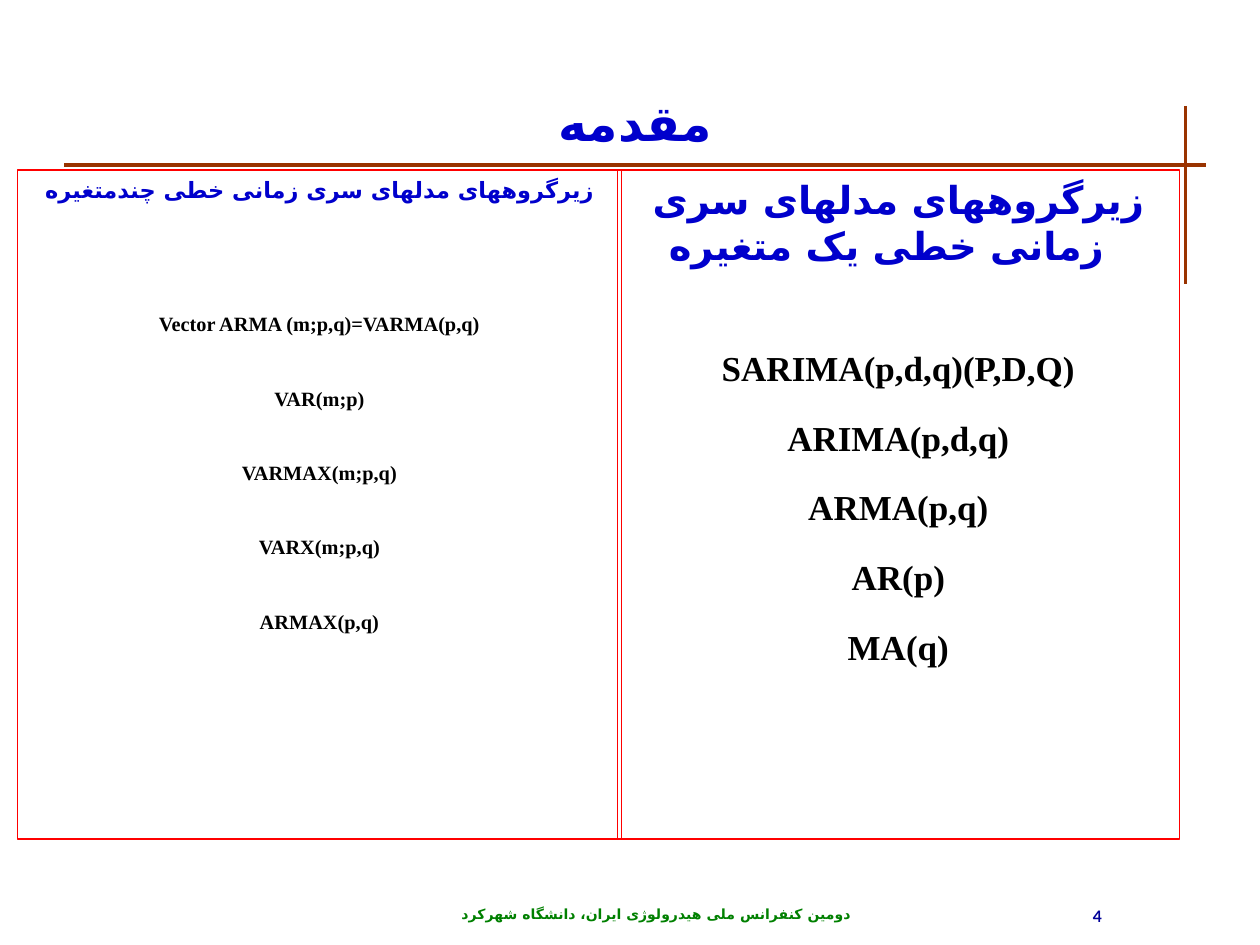
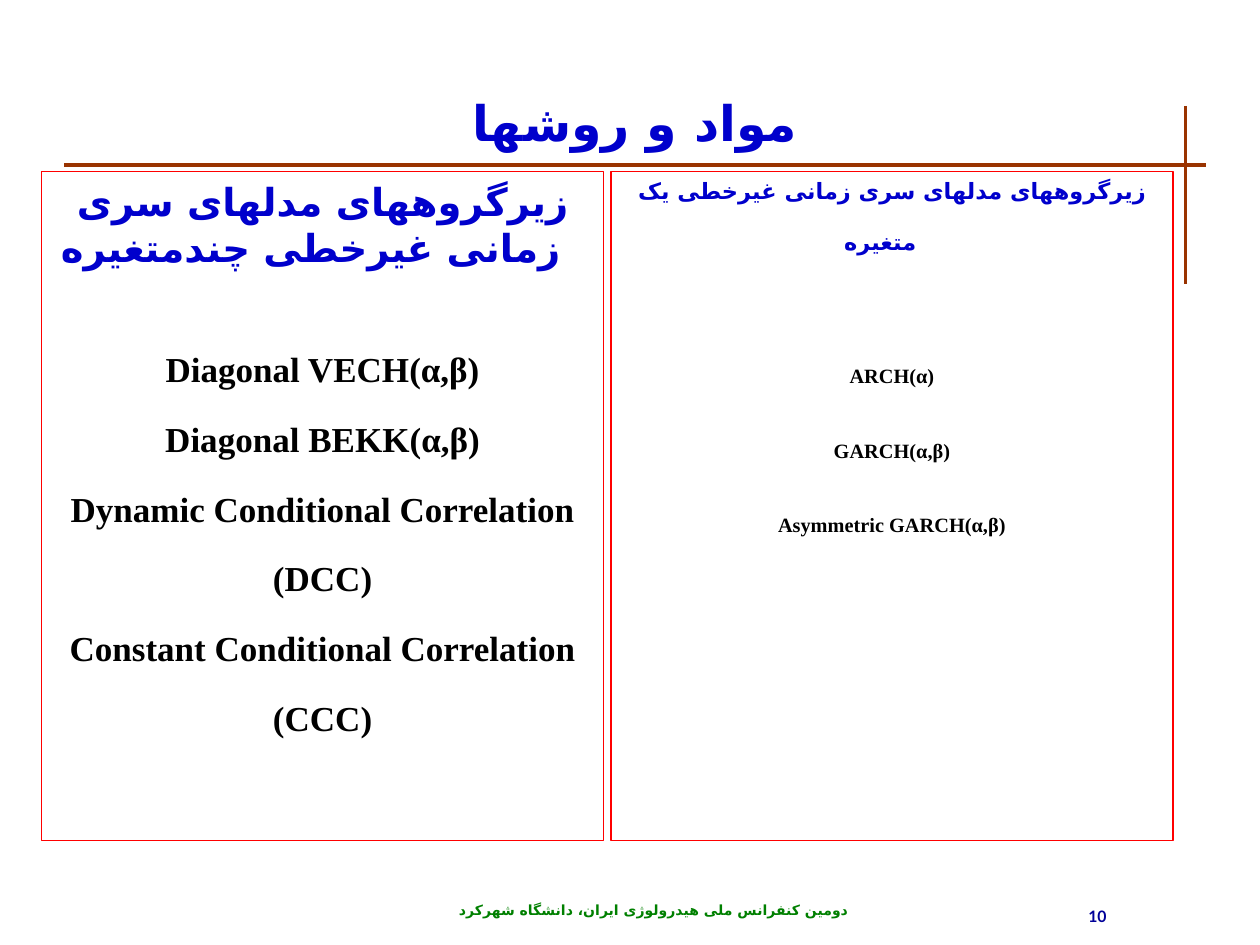
from lxml import etree
from pptx import Presentation
from pptx.dml.color import RGBColor
from pptx.enum.shapes import MSO_CONNECTOR, MSO_SHAPE
from pptx.enum.text import MSO_ANCHOR, PP_ALIGN
from pptx.oxml.ns import qn
from pptx.util import Pt

RECTANGLE = MSO_SHAPE.RECTANGLE
STRAIGHT = MSO_CONNECTOR.STRAIGHT
CENTER = PP_ALIGN.CENTER
TOP, MIDDLE, BOTTOM = MSO_ANCHOR.TOP, MSO_ANCHOR.MIDDLE, MSO_ANCHOR.BOTTOM

BROWN, BLUE, BLACK = "993300", "0000CC", "000000"
RED, GREEN, NAVY = "FF0000", "008000", "000099"
SERIF, SANS, NUMBER_FONT = "Times New Roman", "Arial", "Lato"
PERSIAN_FONT = "DejaVu Sans"
HANGING = Pt(13.7)
FOOTER = "دومین کنفرانس ملی هیدرولوژی ایران، دانشگاه شهرکرد"

# Text formats of a panel: large type, and compact type with wide gaps
LARGE = dict(heading_size=22, row_size=20, first_gap=32.5, row_gap=3.8)
COMPACT = dict(heading_size=12.8, row_size=11.6, first_gap=55, row_gap=21.6)
HEADING_GAP = 13.7


def color(value):
    return RGBColor.from_string(value)


def add_text(frame, text, size, ink, font=SERIF, rtl=False, margin=0,
             indent=0, before=0, lines=1):
    """Write one bold centred paragraph, reusing the first empty one."""
    para = frame.paragraphs[0]
    if para.runs:
        para = frame.add_paragraph()
    para.alignment = CENTER
    para.line_spacing = lines
    para.space_before = Pt(before)
    properties = para._p.get_or_add_pPr()
    properties.set("marL", str(margin))
    properties.set("indent", str(indent))
    if rtl:
        properties.set("rtl", "1")
    span = para.add_run()
    span.text = text
    span.font.size = Pt(size)
    span.font.bold = True
    span.font.name = font
    span.font.color.rgb = color(ink)
    complex_font = etree.SubElement(span.font._element, qn("a:cs"))
    complex_font.set("typeface", PERSIAN_FONT)


def add_label(page, box, text, anchor, **text_format):
    frame = page.shapes.add_textbox(*map(Pt, box)).text_frame
    frame.word_wrap = True
    frame.vertical_anchor = anchor
    add_text(frame, text, **text_format)


def add_rule(page, *ends):
    rule = page.shapes.add_connector(STRAIGHT, *map(Pt, ends))
    rule.line.color.rgb = color(BROWN)
    rule.line.width = Pt(2)
    etree.SubElement(rule._element.spPr, qn("a:effectLst"))


def add_header(page, title):
    # Crossing rules and the title above them
    add_rule(page, 689, 94.3, 36.7, 94.3)
    add_rule(page, 677.5, 60.5, 677.5, 162)
    add_label(page, (48.2, 20.2, 629.3, 69.8), title, BOTTOM,
              size=28, ink=BLUE, rtl=True)


def add_footer(page, box, number):
    add_label(page, box, FOOTER, MIDDLE, size=8, ink=GREEN, font=SANS, rtl=True)
    add_label(page, (552.2, 505.5, 149.8, 36), number, MIDDLE,
              size=9, ink=NAVY, font=NUMBER_FONT)


def add_panel(page, box, heading, models, style):
    # Outlined panel: heading, then one row for each model
    panel = page.shapes.add_shape(RECTANGLE, *map(Pt, box))
    panel.shadow.inherit = False
    panel.fill.background()
    panel.line.color.rgb = color(RED)
    panel.line.width = Pt(0.75)
    frame = panel.text_frame
    frame.word_wrap = True
    frame.vertical_anchor = TOP
    for index, line in enumerate(heading):
        add_text(frame, line, style["heading_size"], BLUE, rtl=True,
                 margin=HANGING, indent=0 if index else -HANGING,
                 before=HEADING_GAP if index else 0)
    for index, model in enumerate(models):
        gap = style["row_gap"] if index else style["first_gap"]
        add_text(frame, model, style["row_size"], BLACK, margin=HANGING,
                 indent=-HANGING, before=gap, lines=1.5)


def add_page(deck, title, number, footer_box, panels):
    page = deck.slides.add_slide(deck.slide_layouts[6])
    add_header(page, title)
    for panel in panels:
        add_panel(page, *panel)
    add_footer(page, footer_box, number)


def main():
    deck = Presentation()
    deck.slide_width, deck.slide_height = Pt(720), Pt(540)

    # Linear models
    add_page(deck, "مقدمه", "4", (252.7, 504, 244.8, 36), [
        ((352.8, 97.2, 321.1, 382.3), ["زیرگروههای مدلهای سری زمانی خطی یک متغیره"],
         ["SARIMA(p,d,q)(P,D,Q)", "ARIMA(p,d,q)", "ARMA(p,q)", "AR(p)", "MA(q)"],
         LARGE),
        ((10.1, 97.2, 344.9, 382.3), ["زیرگروههای مدلهای سری زمانی خطی چندمتغیره"],
         ["Vector ARMA (m;p,q)=VARMA(p,q)", "VAR(m;p)", "VARMAX(m;p,q)",
          "VARX(m;p,q)", "ARMAX(p,q)"],
         COMPACT),
    ])

    # Nonlinear models
    add_page(deck, "مواد و روشها", "10", (249.8, 501.8, 247.7, 36), [
        ((23.8, 97.9, 321.1, 382.3), ["زیرگروههای مدلهای سری زمانی غیرخطی چندمتغیره"],
         ["Diagonal VECH(α,β)", "Diagonal BEKK(α,β)",
          "Dynamic Conditional Correlation", "(DCC)",
          "Constant Conditional Correlation", "(CCC)"],
         LARGE),
        ((349.2, 97.9, 321.1, 382.3),
         ["زیرگروههای مدلهای سری زمانی غیرخطی یک", "متغیره"],
         ["ARCH(α)", "GARCH(α,β)", "Asymmetric GARCH(α,β)"],
         COMPACT),
    ])
    deck.save("out.pptx")


if __name__ == "__main__":
    main()
